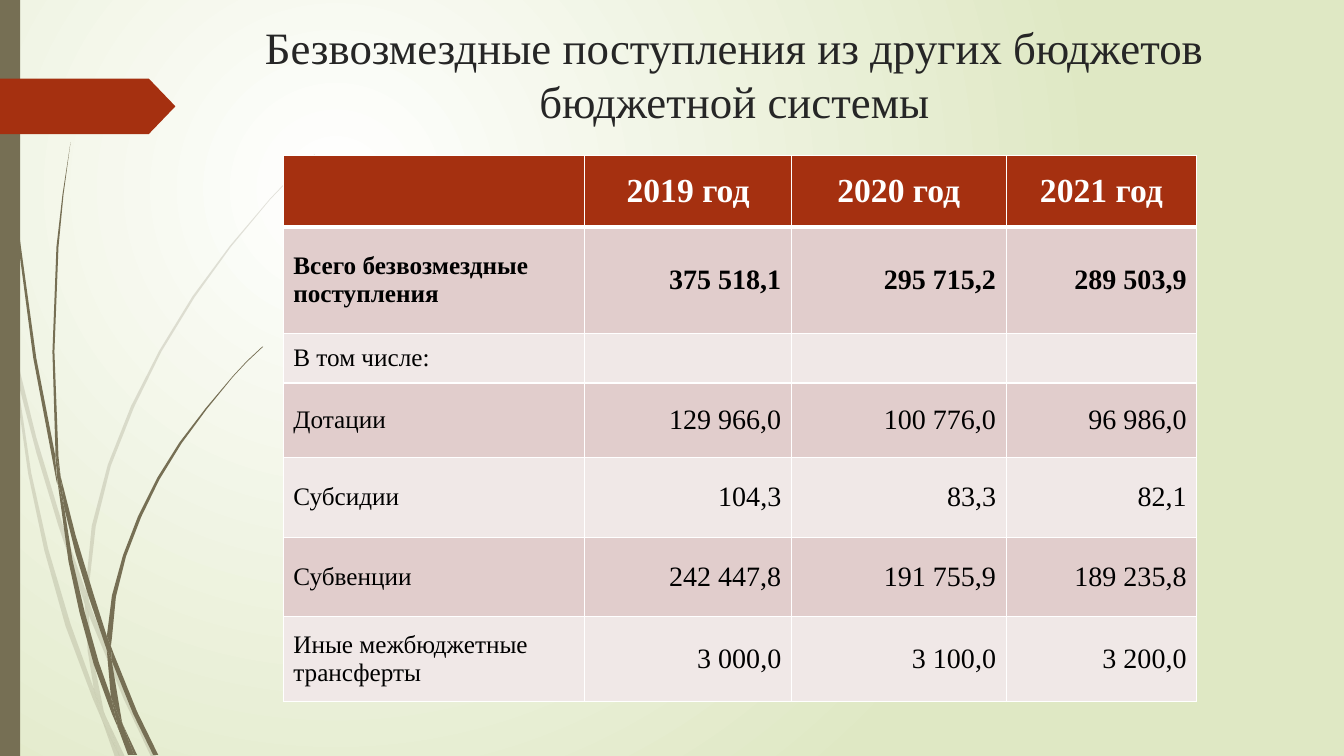
from dataclasses import dataclass

import lxml.etree
import pptx
import pptx.dml.color
import pptx.enum.shapes
import pptx.enum.text
import pptx.oxml
import pptx.oxml.ns
import pptx.util

Inches = pptx.util.Inches
qn = pptx.oxml.ns.qn
ALIGN = pptx.enum.text.PP_ALIGN
ANCHOR = pptx.enum.text.MSO_ANCHOR


@dataclass(frozen=True)
class Theme:
    font: str = "Times New Roman"
    glow: str = "FFFFFF"
    meadow: str = "DFE8C4"
    stem: str = "766F54"
    accent: str = "A53010"
    title: str = "262626"
    text: str = "000000"
    header_text: str = "FFFFFF"
    border: str = "FFFFFF"
    bands: tuple = ("E1CDCC", "F0E8E7")
    title_size: int = 32
    header_size: int = 24
    label_size: int = 18
    value_size: int = 20


THEME = Theme()

TITLE = "Безвозмездные поступления из других бюджетов бюджетной системы"
HEADER = ("", "2019 год", "2020 год", "2021 год")
INCOME = (
    ("Всего безвозмездные поступления", "375 518,1", "295 715,2", "289 503,9"),
    ("В том числе:", "", "", ""),
    ("Дотации", "129 966,0", "100 776,0", "96 986,0"),
    ("Субсидии", "104,3", "83,3", "82,1"),
    ("Субвенции", "242 447,8", "191 755,9", "189 235,8"),
    ("Иные межбюджетные трансферты", "3 000,0", "3 100,0", "3 200,0"),
)
COLUMN_WIDTHS = (2.99, 2.05, 2.13, 1.89)
ROW_HEIGHTS = (0.71, 1.06, 0.49, 0.74, 0.79, 0.79, 0.84)

# Grass blades: corner points (x, y) of each segment between crossings
PALE_BLADES = (
    ((0.11, 3.5), (0.09, 3.22), (0, 2.82), (0, 2.99), (0.1, 3.44)),
    ((0.58, 5.22), (0.84, 5.99), (0.85, 5.86), (0.62, 5.2), (0.36, 4.34), (0.14, 3.45),
     (0.17, 3.76), (0.36, 4.49)),
    ((0.92, 6.07), (0.88, 5.96), (0.88, 6.1), (1.23, 6.94), (1.5, 7.51), (1.55, 7.51),
     (1.27, 6.92)),
    ((1.19, 7.51), (1.24, 7.51), (1.05, 7.11)),
    ((0.93, 6.83), (0.7, 6.19), (0.48, 5.45), (0.31, 4.69), (0.17, 3.76), (0.11, 3.5),
     (0.28, 4.7), (0.44, 5.46), (0.65, 6.21), (0.92, 6.93), (1.01, 7.14), (0.99, 7.07)),
    ((0.84, 5.99), (0.87, 6.46), (0.93, 6.83), (0.96, 6.92), (1.05, 7.11), (1.03, 7.06),
     (0.91, 6.46), (0.88, 6.1), (0.88, 6.08)),
    ((0.88, 5.84), (0.95, 5.22), (1.1, 4.62), (1.33, 4.04), (1.6, 3.49), (1.93, 2.95),
     (2.29, 2.45), (2.68, 1.98), (2.9, 1.75), (3.12, 1.54), (3.12, 1.53), (2.89, 1.75),
     (2.68, 1.97), (2.28, 2.44), (1.91, 2.94), (1.58, 3.48), (1.3, 4.03), (1.07, 4.61),
     (0.91, 5.22), (0.85, 5.84), (0.85, 5.86), (0.88, 5.96)),
    ((1.01, 7.14), (1.14, 7.51), (1.19, 7.51)),
    ((0.88, 6.08), (0.88, 6.1), (0.88, 5.96), (0.85, 5.86), (0.84, 5.99)),
    ((0.96, 6.92), (0.93, 6.83), (0.99, 7.07), (1.01, 7.14), (1.19, 7.51), (1.05, 7.11)),
)
DARK_BLADES = (
    ((0.07, 1.1), (0.17, 2.33), (0.33, 3.55), (0.56, 4.77), (0.57, 4.81), (0.55, 4.57),
     (0.55, 4.53), (0.36, 3.55), (0.19, 2.32), (0.08, 1.09), (0.05, 0.48), (0.04, 0),
     (0.03, 0), (0.04, 0.48)),
    ((0.88, 5.92), (1.06, 6.45), (1.06, 6.33), (1.06, 6.31), (0.93, 5.9), (0.75, 5.31),
     (0.6, 4.72), (0.64, 5.05), (0.75, 5.49)),
    ((1.13, 6.49), (1.1, 6.41), (1.11, 6.56), (1.32, 7.08), (1.52, 7.49), (1.57, 7.49),
     (1.36, 7.06)),
    ((1.1, 6.91), (0.98, 6.57), (0.84, 6.07), (0.72, 5.56), (0.64, 5.05), (0.57, 4.77),
     (0.68, 5.57), (0.79, 6.08), (0.93, 6.59), (1.11, 7.08), (1.17, 7.22), (1.16, 7.17)),
    ((0.6, 4.72), (0.58, 4.53), (0.54, 3.49), (0.58, 2.45), (0.63, 1.93), (0.7, 1.41),
     (0.62, 1.93), (0.56, 2.45), (0.52, 3.49), (0.55, 4.49)),
    ((1.33, 7.49), (1.36, 7.49), (1.22, 7.19)),
    ((0.57, 4.77), (0.64, 5.05), (0.6, 4.72), (0.55, 4.49), (0.55, 4.53)),
    ((1.11, 6.33), (1.15, 5.92), (1.25, 5.52), (1.4, 5.13), (1.58, 4.76), (1.8, 4.4),
     (2.05, 4.06), (2.31, 3.74), (2.45, 3.59), (2.61, 3.44), (2.6, 3.44), (2.45, 3.58),
     (2.31, 3.73), (2.04, 4.05), (1.78, 4.39), (1.56, 4.74), (1.37, 5.12), (1.22, 5.51),
     (1.11, 5.91), (1.06, 6.31), (1.1, 6.41)),
    ((1.17, 7.22), (1.27, 7.49), (1.31, 7.49)),
    ((1.06, 6.45), (1.1, 6.91), (1.16, 7.06), (1.22, 7.19), (1.21, 7.16), (1.11, 6.56),
     (1.09, 6.51)),
    ((1.06, 6.45), (1.09, 6.51), (1.11, 6.56), (1.1, 6.41), (1.06, 6.31)),
    ((1.16, 7.06), (1.1, 6.91), (1.16, 7.17), (1.17, 7.22), (1.3, 7.49), (1.33, 7.49),
     (1.22, 7.19)),
)


def rgb(colour):
    return pptx.dml.color.RGBColor.from_string(colour)


def paint_background(slide):
    stops = "".join(
        f'<a:gs pos="{pos}"><a:srgbClr val="{colour}"/></a:gs>'
        for pos, colour in ((0, THEME.glow), (100000, THEME.meadow)))
    background = pptx.oxml.parse_xml(
        f'<p:bg {pptx.oxml.ns.nsdecls("p", "a")}><p:bgPr>'
        f'<a:gradFill rotWithShape="1"><a:gsLst>{stops}</a:gsLst><a:path path="circle">'
        '<a:fillToRect l="50000" t="50000" r="100000" b="100000"/></a:path></a:gradFill>'
        '<a:effectLst/></p:bgPr></p:bg>')
    slide.element.cSld.insert(0, background)


def paint_shape(shape, colour, opacity=100):
    shape.shadow.inherit = False
    shape.line.fill.background()
    shape.fill.solid()
    shape.fill.fore_color.rgb = rgb(colour)
    if opacity < 100:
        tint = shape.element.spPr.find(qn("a:solidFill")).find(qn("a:srgbClr"))
        lxml.etree.SubElement(tint, qn("a:alpha"), val=str(opacity * 1000))


def add_blade(slide, corners, opacity=100):
    start, *rest = [(Inches(x), Inches(y)) for x, y in corners]
    builder = slide.shapes.build_freeform(*start)
    builder.add_line_segments(rest, close=True)
    paint_shape(builder.convert_to_shape(), THEME.stem, opacity)


def add_preset(slide, kind, left, top, width, height, colour):
    shape = slide.shapes.add_shape(
        kind, Inches(left), Inches(top), Inches(width), Inches(height))
    paint_shape(shape, colour)
    return shape


def write(frame, text, size, colour, align, bold=False):
    frame.text = text
    paragraph = frame.paragraphs[0]
    paragraph.alignment = align
    for run in paragraph.runs:
        run.font.name = THEME.font
        run.font.size = pptx.util.Pt(size)
        run.font.bold = bold
        run.font.color.rgb = rgb(colour)


def place_title(slide):
    title = slide.shapes.title
    title.left, title.top = Inches(2.41), Inches(0.15)
    title.width, title.height = Inches(9.75), Inches(1.4)
    title.text_frame.word_wrap = True
    title.text_frame.vertical_anchor = ANCHOR.TOP
    write(title.text_frame, TITLE, THEME.title_size, THEME.title, ALIGN.CENTER)


def style_cell(cell, fill, bottom):
    cell.vertical_anchor = ANCHOR.MIDDLE
    cell.fill.solid()
    cell.fill.fore_color.rgb = rgb(fill)
    # Borders come before the fill in the cell properties
    sides = (("lnL", 1), ("lnR", 1), ("lnT", 1), ("lnB", bottom))
    for place, (side, points) in enumerate(sides):
        cell._tc.tcPr.insert(place, pptx.oxml.parse_xml(
            f'<a:{side} {pptx.oxml.ns.nsdecls("a")} w="{pptx.util.Pt(points)}"><a:solidFill>'
            f'<a:srgbClr val="{THEME.border}"/></a:solidFill></a:{side}>'))


def add_income_table(slide):
    income = slide.shapes.add_table(
        len(ROW_HEIGHTS), len(COLUMN_WIDTHS), Inches(2.81), Inches(1.54),
        Inches(sum(COLUMN_WIDTHS)), Inches(sum(ROW_HEIGHTS))).table
    for column, width in zip(income.columns, COLUMN_WIDTHS):
        column.width = Inches(width)
    for row, height in zip(income.rows, ROW_HEIGHTS):
        row.height = Inches(height)
    for r, entries in enumerate((HEADER, *INCOME)):
        for c, entry in enumerate(entries):
            cell = income.cell(r, c)
            if r == 0:
                style_cell(cell, THEME.accent, 3)
                size, colour, align = THEME.header_size, THEME.header_text, ALIGN.CENTER
            else:
                style_cell(cell, THEME.bands[(r - 1) % 2], 1)
                size = THEME.value_size if c else THEME.label_size
                colour, align = THEME.text, ALIGN.RIGHT if c else ALIGN.LEFT
            write(cell.text_frame, entry, size, colour, align, bold=r < 2)


def main():
    deck = pptx.Presentation()
    deck.slide_width, deck.slide_height = Inches(13.33), Inches(7.5)
    slide = deck.slides.add_slide(deck.slide_layouts[5])
    # Backdrop: grass, side bar and red tag
    paint_background(slide)
    for blades, opacity in ((PALE_BLADES, 20), (DARK_BLADES, 100)):
        for corners in blades:
            add_blade(slide, corners, opacity)
    kinds = pptx.enum.shapes.MSO_SHAPE
    add_preset(slide, kinds.RECTANGLE, 0, 0, 0.2, 7.5, THEME.stem)
    tag = add_preset(slide, kinds.PENTAGON, 0, 0.78, 1.74, 0.55, THEME.accent)
    tag.adjustments[0] = 0.48
    # Content
    place_title(slide)
    add_income_table(slide)
    deck.save("out.pptx")


if __name__ == "__main__":
    main()
